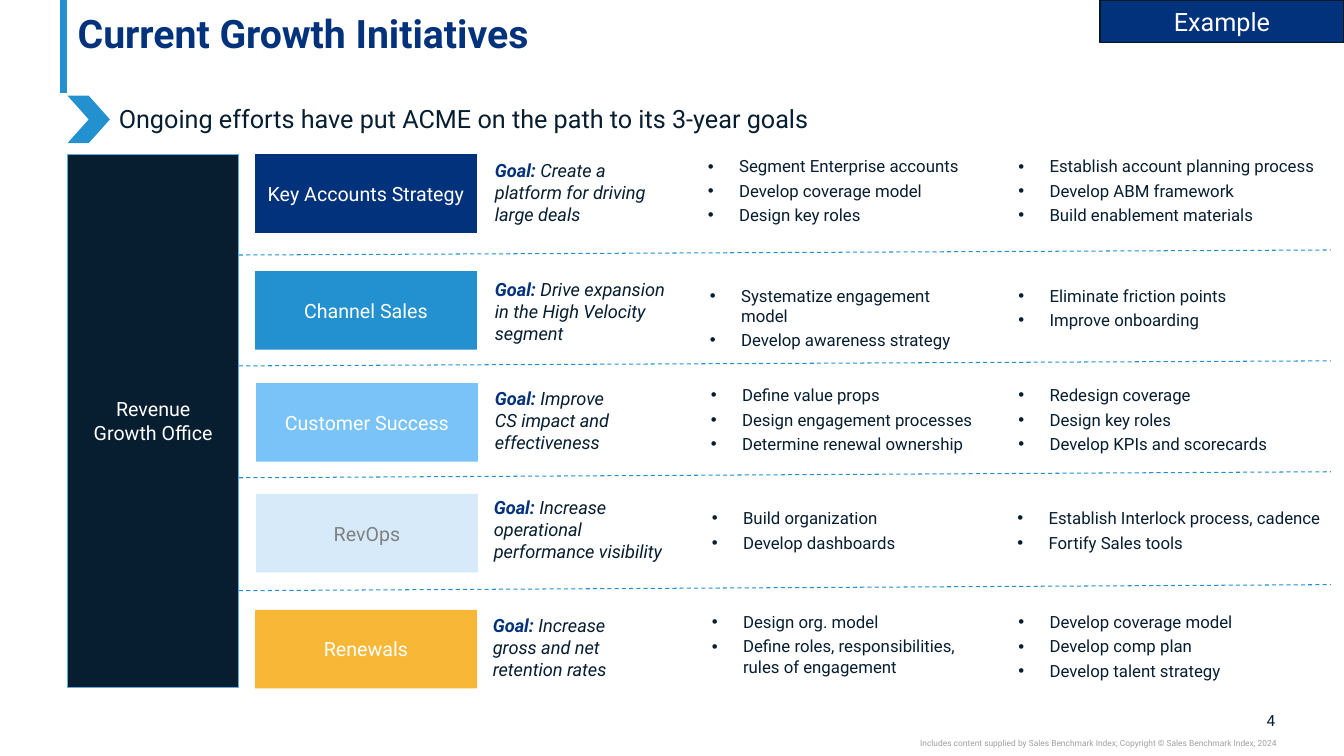
"""Build the growth initiatives slide."""
import dataclasses

import lxml.etree
import pptx
import pptx.dml.color
import pptx.enum.dml
import pptx.enum.shapes
import pptx.enum.text
import pptx.oxml.ns
import pptx.util

Inches = pptx.util.Inches
Pt = pptx.util.Pt
ALIGN = pptx.enum.text.PP_ALIGN
ANCHOR = pptx.enum.text.MSO_ANCHOR
SHAPE = pptx.enum.shapes.MSO_SHAPE
qn = pptx.oxml.ns.qn


@dataclasses.dataclass(frozen=True)
class Theme:
    """Font, colours and type sizes of the slide."""
    font: str = "Roboto"
    navy: str = "03327C"
    ink: str = "071E31"
    edge: str = "051624"
    blue: str = "2391CF"
    mid: str = "60ABE8"
    sky: str = "7AC3F8"
    pale: str = "D7EAF9"
    amber: str = "F8B737"
    white: str = "FFFFFF"
    grey: str = "808080"
    silver: str = "A0A0A0"
    title: int = 28
    lead: int = 18
    label: int = 14
    goal: int = 13
    bullet: int = 12
    number: int = 11
    notice: int = 6


T = Theme()


@dataclasses.dataclass(frozen=True)
class Initiative:
    """One row: name box, goal and two bullet lists."""
    name: str
    fill: str
    color: str
    left: float
    top: float
    goal: str
    goal_box: tuple
    first_left: float
    first: tuple
    second_left: float
    second: tuple


INITIATIVES = (
    Initiative("Key Accounts Strategy", T.navy, T.white, 2.53, 1.53,
               "Create a platform for driving large deals", (4.81, 1.52, 1.91),
               6.82, ("Segment Enterprise accounts", "Develop coverage model", "Design key roles"),
               9.9, ("Establish account planning process", "Develop ABM framework",
                     "Build enablement materials")),
    Initiative("Channel Sales", T.blue, T.white, 2.53, 2.69,
               "Drive expansion in the High Velocity segment", (4.81, 2.7, 2.05),
               6.84, ("Systematize engagement model", "Develop awareness strategy"),
               9.9, ("Eliminate friction points", "Improve onboarding")),
    Initiative("Customer Success", T.sky, T.white, 2.54, 3.8,
               "Improve CS impact and effectiveness", (4.81, 3.78, 1.48),
               6.85, ("Define value props", "Design engagement processes",
                      "Determine renewal ownership"),
               9.9, ("Redesign coverage", "Design key roles", "Develop KPIs and scorecards")),
    Initiative("RevOps", T.pale, T.grey, 2.54, 4.9,
               "Increase operational performance visibility", (4.8, 4.86, 2.06),
               6.86, ("Build organization", "Develop dashboards"),
               9.89, ("Establish Interlock process, cadence", "Fortify Sales tools")),
    Initiative("Renewals", T.amber, T.white, 2.53, 6.05,
               "Increase gross and net retention rates", (4.79, 6.03, 1.7),
               6.86, ("Design org. model", "Define roles, responsibilities, rules of engagement"),
               9.9, ("Develop coverage model", "Develop comp plan", "Develop talent strategy")),
)
DIVIDERS = ((2.53, 2.48), (3.63, 3.58), (4.74, 4.68), (5.86, 5.8))
ROW_HEIGHT = 0.78


def rgb(color):
    """Return a colour object for a hex string."""
    return pptx.dml.color.RGBColor.from_string(color)


def apply(obj, **values):
    """Set each attribute of an object from the given values."""
    for name, value in values.items():
        setattr(obj, name, value)


def frame(sp, inset=(0.1, 0.1, 0.1, 0.1), anchor=ANCHOR.MIDDLE):
    """Set wrapping, anchor and insets, and return the text frame."""
    tf = sp.text_frame
    left, top, right, bottom = map(Inches, inset)
    apply(tf, word_wrap=True, auto_size=pptx.enum.text.MSO_AUTO_SIZE.NONE,
          vertical_anchor=anchor, margin_left=left, margin_top=top,
          margin_right=right, margin_bottom=bottom)
    return tf


def add_run(p, text, size, color, **style):
    """Add a formatted run to a paragraph."""
    r = p.add_run()
    r.text = text
    apply(r.font, name=T.font, size=Pt(size), **style)
    r.font.color.rgb = rgb(color)


def paragraphs(tf, count):
    """Return the given number of paragraphs, starting with the first."""
    return [tf.paragraphs[0]] + [tf.add_paragraph() for _ in range(count - 1)]


def write(tf, lines, size, color, align=ALIGN.LEFT):
    """Write lines as plain paragraphs."""
    for p, text in zip(paragraphs(tf, len(lines)), lines):
        p.alignment = align
        add_run(p, text, size, color)


def add_box(s, box, fill, lines=(), size=T.label, color=T.white, line=None, kind=SHAPE.RECTANGLE):
    """Add a filled shape with centred text."""
    sp = s.shapes.add_shape(kind, *map(Inches, box))
    sp.shadow.inherit = False
    sp.fill.solid()
    sp.fill.fore_color.rgb = rgb(fill)
    if line:
        sp.line.color.rgb = rgb(line[0])
        sp.line.width = Pt(line[1])
    else:
        sp.line.fill.background()
    if lines:
        write(frame(sp), lines, size, color, ALIGN.CENTER)


def add_text(s, box, text, size, color, align=ALIGN.LEFT, inset=(0, 0, 0, 0), anchor=ANCHOR.TOP):
    """Add a one-line text box."""
    sp = s.shapes.add_textbox(*map(Inches, box))
    write(frame(sp, inset, anchor), [text], size, color, align)


def add_line(s, start, end, width, dashed=False):
    """Add a straight blue line."""
    cx = s.shapes.add_connector(pptx.enum.shapes.MSO_CONNECTOR.STRAIGHT,
                                *map(Inches, start + end))
    cx.line.color.rgb = rgb(T.blue)
    cx.line.width = Pt(width)
    if dashed:
        cx.line.dash_style = pptx.enum.dml.MSO_LINE.DASH
    lxml.etree.SubElement(cx._element.spPr, qn("a:effectLst"))


def add_goal(s, box, goal):
    """Add the goal statement of a row."""
    sp = s.shapes.add_textbox(*map(Inches, box))
    p = frame(sp).paragraphs[0]
    add_run(p, "Goal: ", T.goal, T.navy, bold=True, italic=True)
    add_run(p, goal, T.goal, T.ink, italic=True)


def add_bullets(s, left, middle, width, items):
    """Add a bullet list centred on the middle of its row."""
    wrapped = sum(len(item) > 40 for item in items)
    height = 0.28 + 0.24 * (len(items) + wrapped)
    sp = s.shapes.add_textbox(*map(Inches, (left, middle - height / 2, width, height)))
    tf = frame(sp, (0.13, 0.13, 0.13, 0.13), ANCHOR.TOP)
    for p, item in zip(paragraphs(tf, len(items)), items):
        pPr = p._p.get_or_add_pPr()
        pPr.set("marL", str(Inches(0.38)))
        pPr.set("indent", str(Inches(-0.31)))
        lxml.etree.SubElement(pPr, qn("a:buFont")).set("typeface", "Arial")
        lxml.etree.SubElement(pPr, qn("a:buChar")).set("char", "•")
        p.space_after = Pt(3)
        add_run(p, item, T.bullet, T.ink)


def add_title(s, text):
    """Move and format the title placeholder."""
    sp = s.shapes.title
    left, top, width, height = map(Inches, (0.67, 0.12, 11.99, 0.84))
    apply(sp, left=left, top=top, width=width, height=height)
    p = frame(sp, (0.1, 0.02, 0.1, 0), ANCHOR.TOP).paragraphs[0]
    apply(p, alignment=ALIGN.LEFT, line_spacing=0.9)
    add_run(p, text, T.title, T.navy, bold=True)


def add_initiative(s, row):
    """Add the name box, goal and bullets of one row."""
    middle = row.top + ROW_HEIGHT / 2
    add_box(s, (row.left, row.top, 2.2, ROW_HEIGHT), row.fill, [row.name], color=row.color)
    add_goal(s, row.goal_box + (ROW_HEIGHT,), row.goal)
    add_bullets(s, row.first_left, middle, 2.95, row.first)
    add_bullets(s, row.second_left, middle, 3.43, row.second)


def main():
    """Build and save the slide."""
    prs = pptx.Presentation()
    apply(prs, slide_width=Inches(13.33), slide_height=Inches(7.5))
    s = prs.slides.add_slide(prs.slide_layouts[5])
    add_line(s, (0.63, 0), (0.63, 0.92), 5)
    add_title(s, "Current Growth Initiatives")
    add_box(s, (0.67, 1.53, 1.7, 5.29), T.ink, ["Revenue", "Growth Office"], line=(T.mid, 0.75))
    for start, end in DIVIDERS:
        add_line(s, (2.37, start), (13.2, end), 0.75, dashed=True)
    for row in INITIATIVES:
        add_initiative(s, row)
    add_box(s, (10.91, 0, 2.42, 0.42), T.navy, ["Example"], T.lead, line=(T.edge, 1))
    add_text(s, (1.08, 0.98, 8.96, 0.4),
             "Ongoing efforts have put ACME on the path to its 3-year goals",
             T.lead, T.ink, inset=(0.1, 0.05, 0.1, 0.05))
    add_box(s, (0.67, 0.95, 0.42, 0.47), T.blue, kind=SHAPE.CHEVRON)
    add_text(s, (12.32, 7.05, 0.33, 0.19), "4", T.number, T.ink, ALIGN.RIGHT, anchor=ANCHOR.MIDDLE)
    add_text(s, (7.5, 7.32, 5.16, 0.1),
             "Includes content supplied by Sales Benchmark Index; "
             "Copyright © Sales Benchmark Index, 2024", T.notice, T.silver, ALIGN.RIGHT)
    prs.save("out.pptx")


if __name__ == "__main__":
    main()
